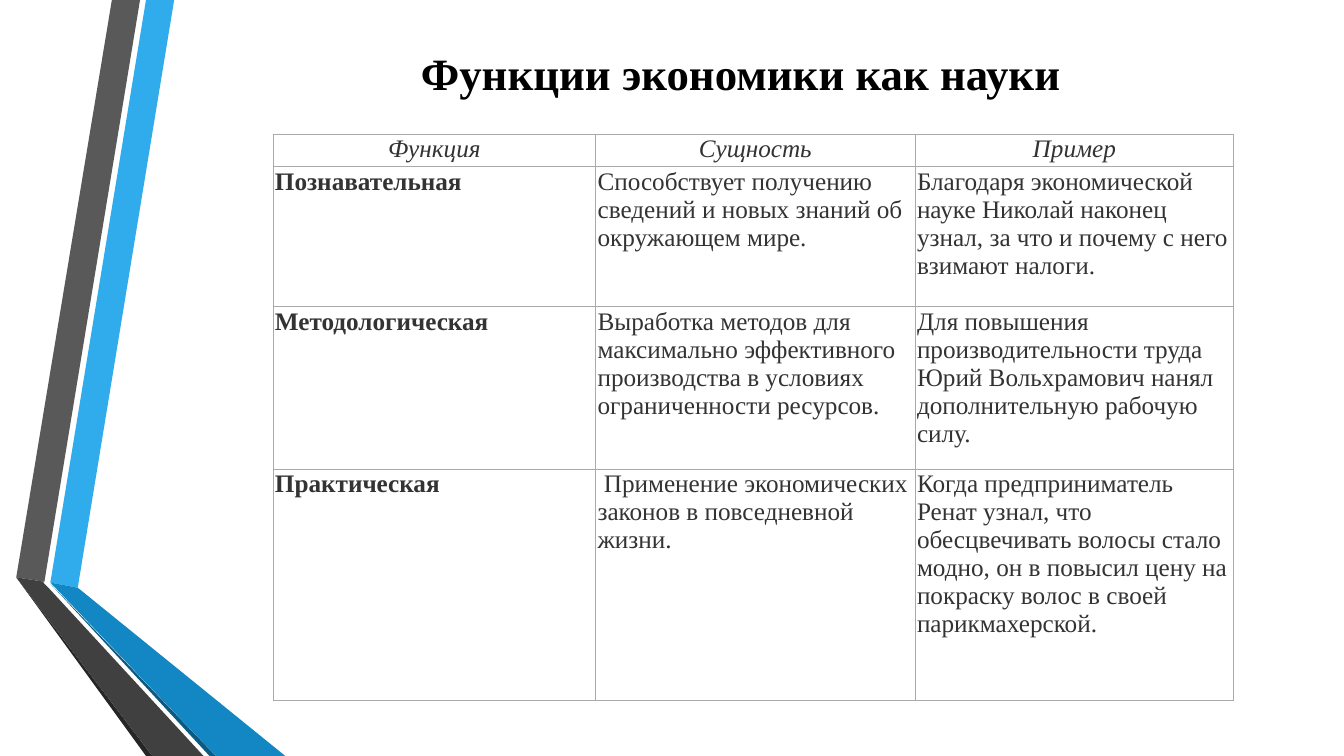
from dataclasses import dataclass

from lxml.etree import SubElement
from pptx import Presentation
from pptx.dml.color import RGBColor
from pptx.enum.text import MSO_ANCHOR, PP_ALIGN
from pptx.oxml.ns import qn
from pptx.util import Cm, Pt


@dataclass(frozen=True)
class Theme:
    """Colours, font and type sizes of the slide."""
    font: str = "Times New Roman"
    title_size: int = 32
    body_size: int = 18
    title: str = "000000"
    body: str = "333333"
    cell: str = "FFFFFF"
    border: str = "AAAAAA"
    blue: str = "30ACEC"
    blue_foot: str = "1287C3"
    blue_shade: str = "0C5A82"
    grey: str = "595959"
    grey_foot: str = "404040"
    grey_shade: str = "262626"


THEME = Theme()

FLOOR = 19.05
RIBBONS = [
    (THEME.blue, [(1.27, 14.68), (1.96, 14.81), (4.39, 0), (3.68, 0)]),
    (THEME.grey, [(3.53, 0), (2.82, 0), (0.41, 14.55), (1.12, 14.66)]),
    (THEME.grey_shade, [(0.41, 14.55), (3.68, FLOOR), (3.84, FLOOR)]),
    (THEME.blue_shade, [(1.27, 14.71), (5.28, FLOOR), (5.44, FLOOR)]),
    (THEME.blue_foot, [(1.27, 14.68), (5.44, FLOOR), (7.19, FLOOR), (1.96, 14.81)]),
    (THEME.grey_foot, [(5.13, FLOOR), (1.22, 14.81), (1.09, 14.68), (1.12, 14.66),
                       (0.41, 14.55), (3.84, FLOOR)]),
]

HEADINGS = ("Функция", "Сущность", "Пример")
FUNCTIONS = [
    ("Познавательная",
     "Способствует получению сведений и новых знаний об окружающем мире.",
     "Благодаря экономической науке Николай наконец узнал, за что и почему "
     "с него взимают налоги."),
    ("Методологическая",
     "Выработка методов для максимально эффективного производства в условиях "
     "ограниченности ресурсов.",
     "Для повышения производительности труда Юрий Вольхрамович нанял "
     "дополнительную рабочую силу."),
    ("Практическая",
     " Применение экономических законов в повседневной жизни.",
     "Когда предприниматель Ренат узнал, что обесцвечивать волосы стало модно, "
     "он в повысил цену на покраску волос в своей парикмахерской."),
]
COLUMN_SHARES = (8.13, 8.05, 8.03)
ROW_SHARES = (0.76, 3.53, 4.09, 5.82)


def write(paragraph, text, size, color, bold=False, italic=False):
    """Add one styled run to a paragraph."""
    run = paragraph.add_run()
    run.text = text
    font = run.font
    font.name, font.size = THEME.font, Pt(size)
    font.bold, font.italic = bold, italic
    font.color.rgb = RGBColor.from_string(color)


def add_ribbons(slide, left, top):
    """Draw the folded ribbons from the given corner."""
    for color, outline in RIBBONS:
        corners = [(Cm(left + x), Cm(top + y)) for x, y in outline]
        builder = slide.shapes.build_freeform(*corners[0])
        builder.add_line_segments(corners[1:], close=True)
        ribbon = builder.convert_to_shape()
        ribbon.shadow.inherit = False
        ribbon.fill.solid()
        ribbon.fill.fore_color.rgb = RGBColor.from_string(color)
        ribbon.line.fill.background()


def add_title(slide, left, top, width, height):
    """Place the centred heading in its box."""
    frame = slide.shapes.add_textbox(Cm(left), Cm(top), Cm(width), Cm(height)).text_frame
    frame.word_wrap = True
    frame.vertical_anchor = MSO_ANCHOR.MIDDLE
    heading = frame.paragraphs[0]
    heading.alignment = PP_ALIGN.CENTER
    write(heading, "Функции экономики как науки", THEME.title_size, THEME.title, bold=True)


def style_cell(cell):
    """Set the margins, borders and fill of a cell."""
    cell.margin_left = cell.margin_right = Cm(0.05)
    cell.margin_top = cell.margin_bottom = Cm(0.03)
    properties = cell._tc.get_or_add_tcPr()
    for side in ("a:lnL", "a:lnR", "a:lnT", "a:lnB"):
        border = SubElement(properties, qn(side), w=str(Pt(0.75)))
        SubElement(SubElement(border, qn("a:solidFill")), qn("a:srgbClr"), val=THEME.border)
    cell.fill.solid()
    cell.fill.fore_color.rgb = RGBColor.from_string(THEME.cell)


def add_functions_table(slide, left, top, width, height):
    """Fill the box with the table of functions."""
    rows = [HEADINGS, *FUNCTIONS]
    table = slide.shapes.add_table(len(rows), len(HEADINGS), Cm(left), Cm(top),
                                   Cm(width), Cm(height)).table
    table.first_row = table.horz_banding = False
    for column, share in zip(table.columns, COLUMN_SHARES):
        column.width = Cm(width * share / sum(COLUMN_SHARES))
    for row, share in zip(table.rows, ROW_SHARES):
        row.height = Cm(height * share / sum(ROW_SHARES))
    for r, texts in enumerate(rows):
        for c, text in enumerate(texts):
            cell = table.cell(r, c)
            style_cell(cell)
            paragraph = cell.text_frame.paragraphs[0]
            paragraph.alignment = PP_ALIGN.CENTER if r == 0 else PP_ALIGN.LEFT
            write(paragraph, text, THEME.body_size, THEME.body,
                  bold=r > 0 and c == 0, italic=r == 0)


def main():
    """Build and save the slide."""
    deck = Presentation()
    deck.slide_width, deck.slide_height = Cm(33.87), Cm(FLOOR)
    slide = deck.slides.add_slide(deck.slide_layouts[6])
    add_ribbons(slide, 0, 0)
    add_title(slide, 4.75, 0, 27.84, 3.66)
    add_functions_table(slide, 6.88, 3.38, 24.21, 14.2)
    deck.save("out.pptx")


if __name__ == "__main__":
    main()
